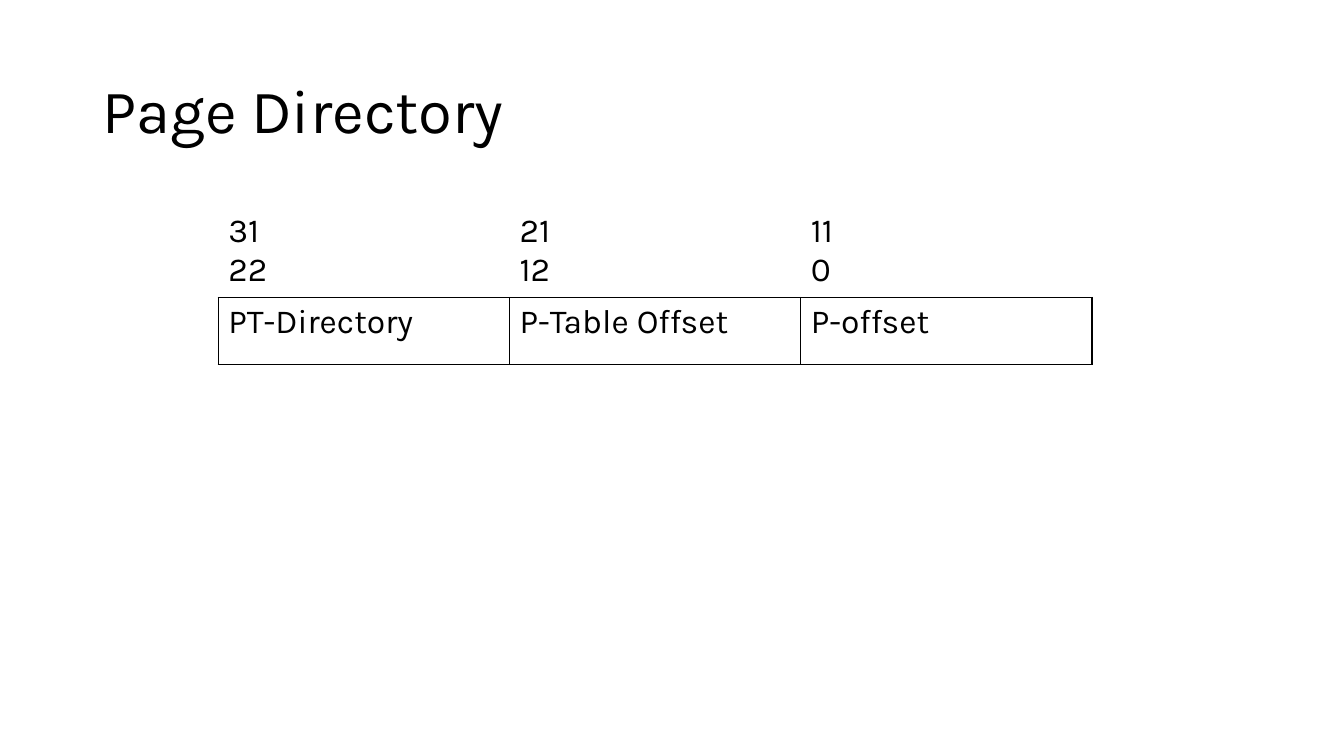
from dataclasses import dataclass

from lxml import etree
from pptx import Presentation
from pptx.dml.color import RGBColor
from pptx.enum import text
from pptx.oxml import ns
from pptx.util import Cm, Pt


@dataclass(frozen=True)
class Theme:
    font: str = "Karla"
    ink: str = "000000"
    title_size: int = 44
    field_size: int = 24
    border: int = 1


THEME = Theme()
FIELDS = [
    ("31\n22", "PT-Directory"),
    ("21\n12", "P-Table Offset"),
    ("11\n0", "P-offset"),
]


def style_text(frame, size):
    for paragraph in frame.paragraphs:
        paragraph.font.name = THEME.font
        paragraph.font.size = Pt(size)
        paragraph.font.color.rgb = RGBColor.from_string(THEME.ink)


def add_title(slide, wording):
    title = slide.shapes.add_textbox(Cm(2.33), Cm(1.01), Cm(29.21), Cm(3.68))
    frame = title.text_frame
    frame.word_wrap = True
    frame.vertical_anchor = text.MSO_ANCHOR.MIDDLE
    frame.text = wording
    frame.paragraphs[0].line_spacing = 0.9
    style_text(frame, THEME.title_size)


def add_borders(cell, sides):
    """Draw solid borders on the given sides, listed in the order L, R, T, B."""
    properties = cell._tc.get_or_add_tcPr()
    for side in sides:
        line = etree.SubElement(properties, ns.qn(f"a:ln{side}"), w=str(Pt(THEME.border)))
        fill = etree.SubElement(line, ns.qn("a:solidFill"))
        etree.SubElement(fill, ns.qn("a:srgbClr"), val=THEME.ink)


def add_address_layout(slide, fields):
    """Show each address field below the range of bits it takes."""
    layout = slide.shapes.add_table(
        2, len(fields), Cm(5.5), Cm(5.21), Cm(22.02), Cm(3.91)
    ).table
    layout.first_row = False
    layout.horz_banding = False
    layout.rows[0].height = Cm(2.23)
    layout.rows[1].height = Cm(1.68)
    for column, field in enumerate(fields):
        for row, (wording, sides) in enumerate(zip(field, ("B", "LRTB"))):
            cell = layout.cell(row, column)
            cell.text = wording
            style_text(cell.text_frame, THEME.field_size)
            add_borders(cell, sides)
            cell.fill.background()


def main():
    deck = Presentation()
    deck.slide_width, deck.slide_height = Cm(33.87), Cm(19.05)
    slide = deck.slides.add_slide(deck.slide_layouts[6])
    add_title(slide, "Page Directory")
    add_address_layout(slide, FIELDS)
    deck.save("out.pptx")


if __name__ == "__main__":
    main()
